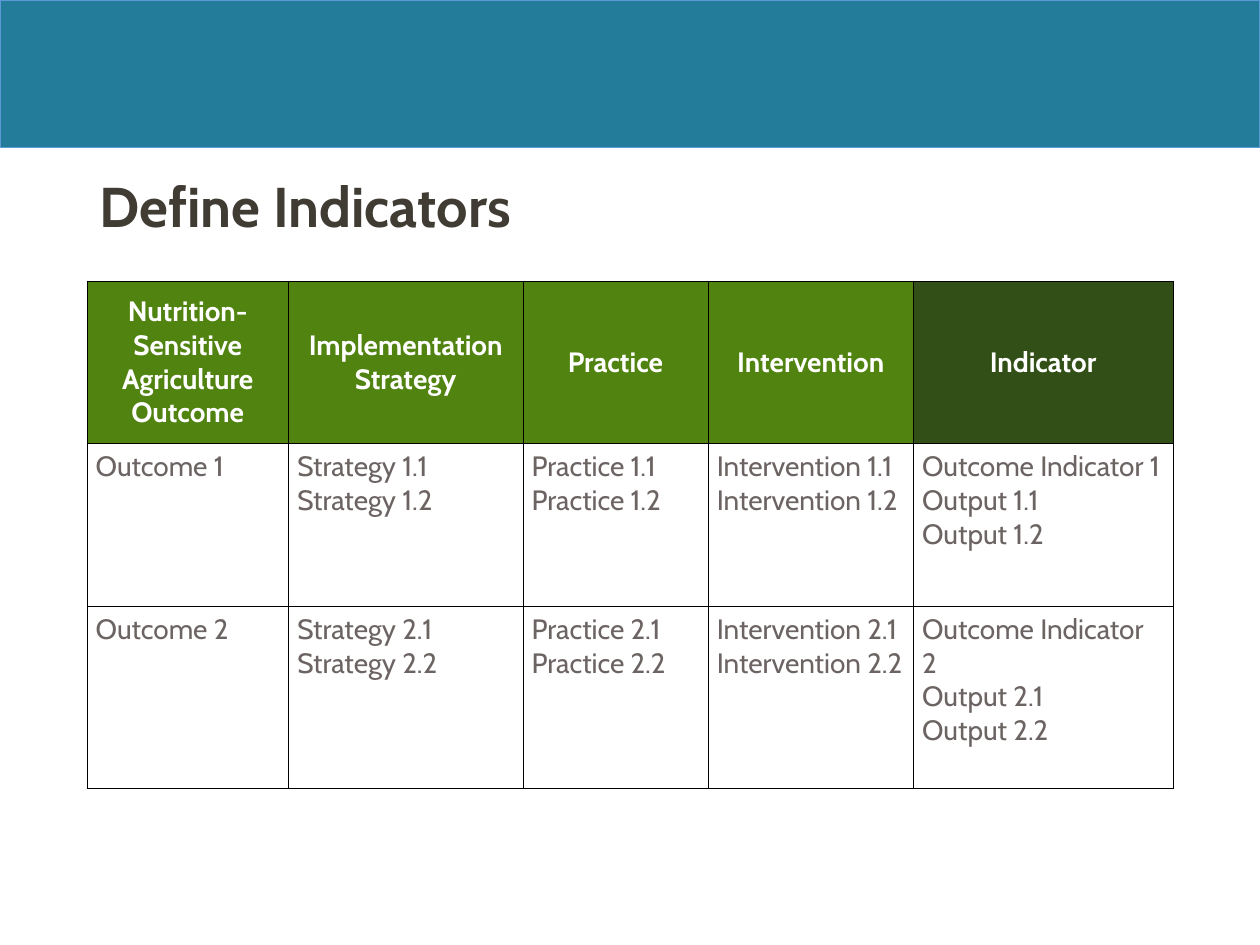
from dataclasses import dataclass
from typing import Optional

from lxml.etree import SubElement
from pptx import Presentation
from pptx.dml.color import RGBColor
from pptx.enum.shapes import MSO_SHAPE
from pptx.enum.text import MSO_ANCHOR, PP_ALIGN
from pptx.oxml.ns import qn
from pptx.util import Inches, Pt

TEAL = RGBColor(0x22, 0x7C, 0x9A)
BLUE = RGBColor(0x5B, 0x9B, 0xD5)
GREEN = RGBColor(0x51, 0x83, 0x11)
FOREST = RGBColor(0x31, 0x4F, 0x16)
WHITE = RGBColor(0xFF, 0xFF, 0xFF)
GRAY = RGBColor(0x6C, 0x64, 0x63)
DARK = RGBColor(0x40, 0x3B, 0x33)
FONT = "Cabin"
LEFT, WIDTH = 0.69, 8.62
HEIGHTS = (1.29, 1.29, 1.45)


@dataclass
class Column:
    head: str
    width: float
    fill: RGBColor
    items: tuple


COLUMNS = (
    Column("Nutrition-Sensitive Agriculture Outcome", 1.6, GREEN, ("Outcome {0}",)),
    Column("Implementation Strategy", 1.86, GREEN, ("Strategy {0}.1", "Strategy {0}.2")),
    Column("Practice", 1.47, GREEN, ("Practice {0}.1", "Practice {0}.2")),
    Column("Intervention", 1.63, GREEN, ("Intervention {0}.1", "Intervention {0}.2")),
    Column("Indicator", 2.06, FOREST,
           ("Outcome Indicator {0}", "Output {0}.1", "Output {0}.2")),
)


def style(para, size: int, color: RGBColor, bold: bool) -> None:
    font = para.font
    font.name, font.size, font.bold = FONT, Pt(size), bold
    font.color.rgb = color


def border(cell) -> None:
    props = cell._tc.get_or_add_tcPr()
    for side in ("lnL", "lnR", "lnT", "lnB"):
        line = SubElement(props, qn(f"a:{side}"), w=str(Pt(0.5)))
        solid = SubElement(line, qn("a:solidFill"))
        SubElement(solid, qn("a:srgbClr"), val="000000")


def draw_cell(cell, lines: list, fill: Optional[RGBColor] = None) -> None:
    cell.margin_left = cell.margin_right = Inches(0.07)
    cell.margin_top = cell.margin_bottom = Inches(0.05)
    border(cell)
    if fill is None:
        cell.fill.background()
    else:
        cell.fill.solid()
        cell.fill.fore_color.rgb = fill
        cell.vertical_anchor = MSO_ANCHOR.MIDDLE
    cell.text_frame.text = "\n".join(lines)
    for para in cell.text_frame.paragraphs:
        if fill is not None:
            para.alignment = PP_ALIGN.CENTER
            para.space_after = Pt(10)
        style(para, 16, GRAY if fill is None else WHITE, fill is not None)


def draw_band(slide) -> None:
    band = slide.shapes.add_shape(
        MSO_SHAPE.RECTANGLE, 0, 0, Inches(10), Inches(1.17))
    band.shadow.inherit = False
    band.fill.solid()
    band.fill.fore_color.rgb = TEAL
    band.line.color.rgb = BLUE
    band.line.width = Pt(0.5)


def draw_table(slide) -> None:
    table = slide.shapes.add_table(
        len(HEIGHTS), len(COLUMNS), Inches(LEFT), Inches(2.23),
        Inches(WIDTH), Inches(sum(HEIGHTS))).table
    table.horz_banding = False
    for row, height in zip(table.rows, HEIGHTS):
        row.height = Inches(height)
    for col, data in enumerate(COLUMNS):
        table.columns[col].width = Inches(data.width)
        draw_cell(table.cell(0, col), [data.head], data.fill)
        for row in range(1, len(HEIGHTS)):
            draw_cell(table.cell(row, col), [item.format(row) for item in data.items])


def draw_title(slide) -> None:
    box = slide.shapes.add_textbox(
        Inches(LEFT), Inches(1.37), Inches(WIDTH), Inches(0.75))
    box.text_frame.word_wrap = True
    para = box.text_frame.paragraphs[0]
    para.text = "Define Indicators"
    para.line_spacing = 0.9
    style(para, 32, DARK, True)


def main() -> None:
    deck = Presentation()
    deck.slide_width, deck.slide_height = Inches(10), Inches(7.5)
    slide = deck.slides.add_slide(deck.slide_layouts[6])
    draw_band(slide)
    draw_table(slide)
    draw_title(slide)
    deck.save("out.pptx")


if __name__ == "__main__":
    main()
